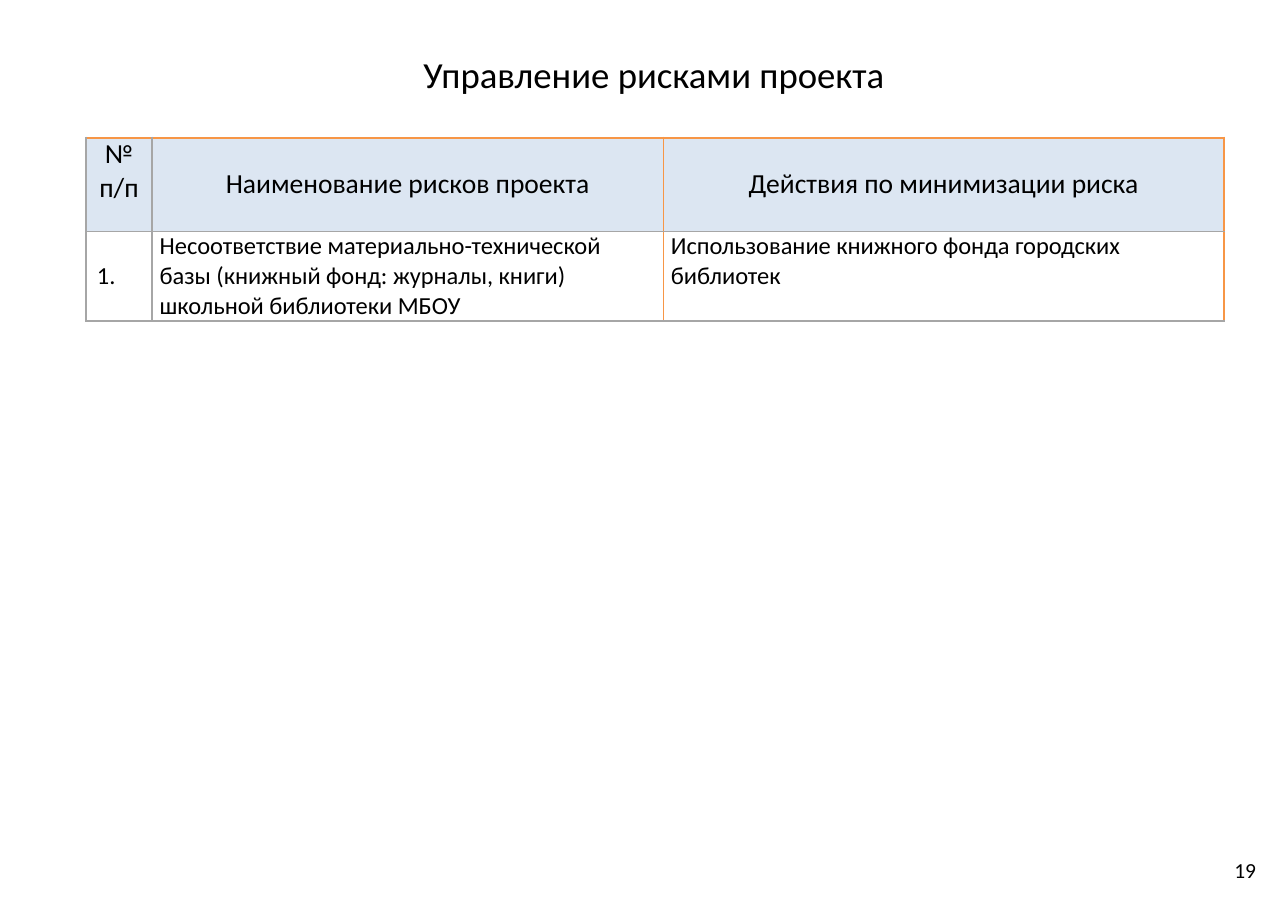
import pptx
import pptx.util
import pptx.dml.color
import pptx.enum.text
import pptx.oxml
from pptx.util import Inches

BLACK = pptx.dml.color.RGBColor(0x00, 0x00, 0x00)
HEADER_BLUE = pptx.dml.color.RGBColor(0xDC, 0xE6, 0xF2)
ORANGE = pptx.dml.color.RGBColor(0xF7, 0x96, 0x46)
GRAY = pptx.dml.color.RGBColor(0xA6, 0xA6, 0xA6)

ALIGN = pptx.enum.text.PP_ALIGN
ANCHOR = pptx.enum.text.MSO_ANCHOR
NAMESPACE = "http://schemas.openxmlformats.org/drawingml/2006/main"

COLUMN_WIDTHS = (0.6, 4.64, 5.09)
ROW_HEIGHTS = (0.85, 0.81)
RISK_ROWS = (
    ("№\nп/п", "Наименование рисков проекта", "Действия по минимизации риска"),
    (
        "1.",
        "Несоответствие материально-технической базы (книжный фонд: журналы, книги) "
        "школьной библиотеки МБОУ",
        "Использование книжного фонда городских библиотек",
    ),
)


def write_text(text_frame, text, size, alignment):
    text_frame.text = text
    for paragraph in text_frame.paragraphs:
        paragraph.alignment = alignment
        paragraph.font.name = "Calibri"
        paragraph.font.size = pptx.util.Pt(size)
        paragraph.font.bold = False
        paragraph.font.color.rgb = BLACK


def set_insets(text_frame):
    text_frame.margin_left = text_frame.margin_right = Inches(0.11)
    text_frame.margin_top = text_frame.margin_bottom = Inches(0.06)
    text_frame.vertical_anchor = ANCHOR.MIDDLE
    text_frame.word_wrap = True


def add_border(cell, side, color, width):
    cell._tc.get_or_add_tcPr().append(pptx.oxml.parse_xml(
        f'<a:{side} xmlns:a="{NAMESPACE}" w="{pptx.util.Pt(width)}">'
        f'<a:solidFill><a:srgbClr val="{color}"/></a:solidFill></a:{side}>'
    ))


def add_title(slide, left, top, width, height):
    title = slide.shapes.title
    title.left, title.top = Inches(left), Inches(top)
    title.width, title.height = Inches(width), Inches(height)
    set_insets(title.text_frame)
    write_text(title.text_frame, "Управление рисками проекта", 24, ALIGN.CENTER)
    title.text_frame.paragraphs[0].line_spacing = 0.85


def format_cell(cell, text, row, column):
    is_header = row == 0
    is_number = column == 0 and not is_header
    write_text(cell.text_frame, text, 18 if is_header else 16,
               ALIGN.CENTER if is_header else ALIGN.LEFT)
    cell.margin_left = cell.margin_right = Inches(0.1 if is_number else 0.07)
    cell.margin_top = cell.margin_bottom = Inches(0)
    middle = is_number or (is_header and column > 0)
    cell.vertical_anchor = ANCHOR.MIDDLE if middle else ANCHOR.TOP

    last_column = len(COLUMN_WIDTHS) - 1
    add_border(cell, "lnL", ORANGE if column == last_column else GRAY, 1)
    add_border(cell, "lnR", ORANGE if column > 0 else GRAY,
               1.5 if column == last_column else 1)
    add_border(cell, "lnT", ORANGE if is_header else GRAY, 1.5 if is_header else 1)
    add_border(cell, "lnB", GRAY, 1)
    if is_header:
        cell.fill.solid()
        cell.fill.fore_color.rgb = HEADER_BLUE
    else:
        cell.fill.background()


def add_risk_table(slide, left, top, width, height):
    table = slide.shapes.add_table(
        len(ROW_HEIGHTS), len(COLUMN_WIDTHS),
        Inches(left), Inches(top), Inches(width), Inches(height)).table
    table.first_row = table.horz_banding = False
    for column, column_width in zip(table.columns, COLUMN_WIDTHS):
        column.width = Inches(column_width)
    for row, row_height in zip(table.rows, ROW_HEIGHTS):
        row.height = Inches(row_height)
    for row, texts in enumerate(RISK_ROWS):
        for column, text in enumerate(texts):
            format_cell(table.cell(row, column), text, row, column)


def add_page_number(slide, left, top, width, height):
    box = slide.shapes.add_textbox(
        Inches(left), Inches(top), Inches(width), Inches(height))
    set_insets(box.text_frame)
    write_text(box.text_frame, "19", 14, ALIGN.RIGHT)


def main():
    presentation = pptx.Presentation()
    presentation.slide_width = Inches(11.69)
    presentation.slide_height = Inches(8.27)
    slide = presentation.slides.add_slide(presentation.slide_layouts[5])
    add_title(slide, 0.77, 0.2, 10.33, 1.01)
    add_risk_table(slide, 0.78, 1.25, sum(COLUMN_WIDTHS), sum(ROW_HEIGHTS))
    add_page_number(slide, 8.78, 7.68, 2.73, 0.44)
    presentation.save("out.pptx")


if __name__ == "__main__":
    main()
